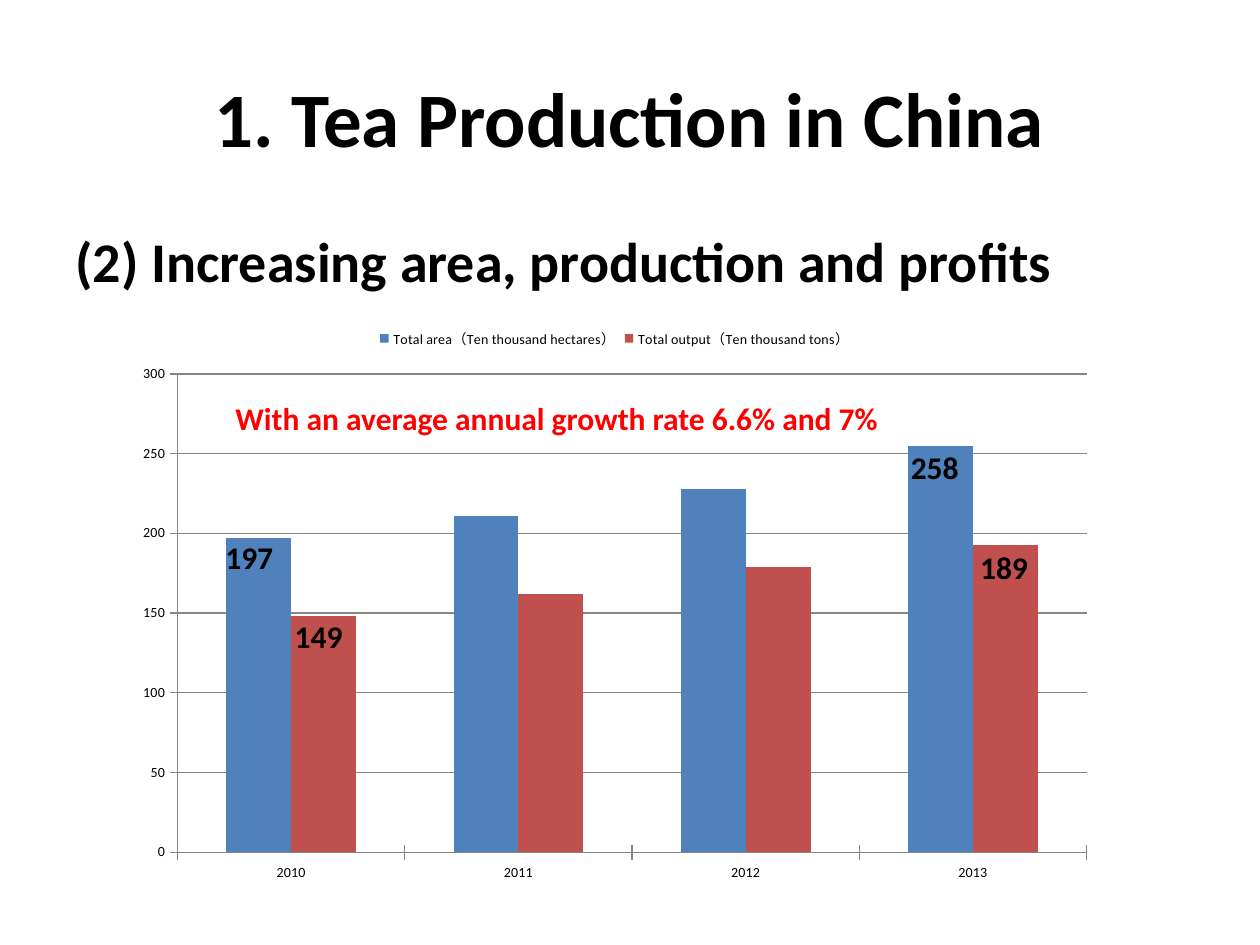
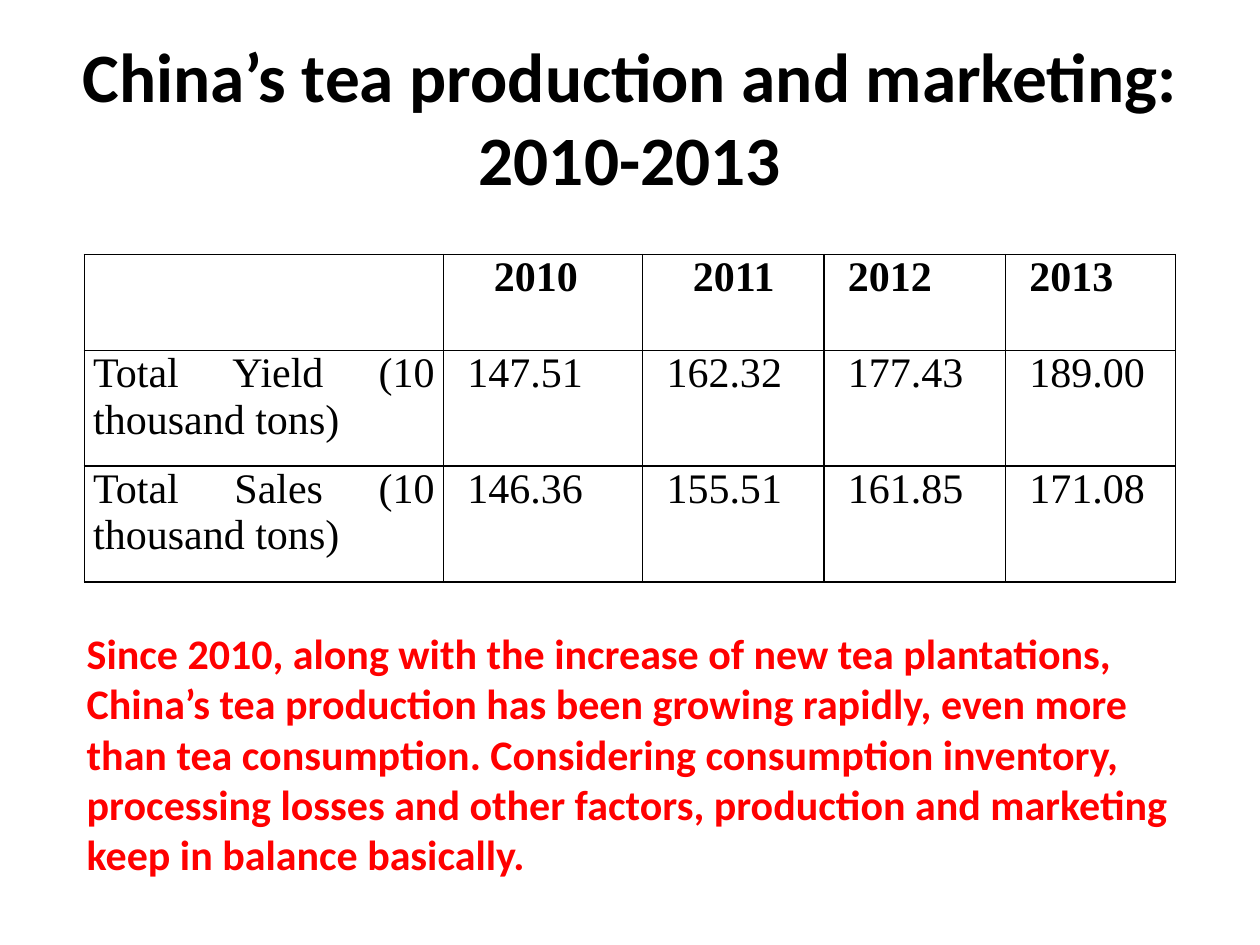
from dataclasses import dataclass

import lxml.etree
import pptx
import pptx.chart.data
import pptx.dml.color
import pptx.enum.chart
import pptx.enum.text
import pptx.oxml.ns
import pptx.util

Inches = pptx.util.Inches
Pt = pptx.util.Pt
Align = pptx.enum.text.PP_ALIGN
Anchor = pptx.enum.text.MSO_ANCHOR

COLORS = {
    "text": "000000",
    "accent": "FF0000",
    "area": "4F81BD",
    "output": "C0504D",
    "grid": "868686",
}
BODY_FONT = "Calibri"
TABLE_FONT = "Times New Roman"


@dataclass
class Label:
    text: str
    left: float
    top: float
    width: float
    height: float
    size: float = 18
    color: str = "text"
    align: Align = Align.LEFT
    anchor: Anchor = Anchor.TOP
    wrap: bool = True


@dataclass
class ChartSeries:
    name: str
    values: tuple[int, ...]
    color: str


YEARS = ("2010", "2011", "2012", "2013")
SERIES = (
    ChartSeries("Total area（Ten thousand hectares）", (197, 211, 228, 255), "area"),
    ChartSeries("Total output（Ten thousand tons）", (148, 162, 179, 193), "output"),
)
BAR_VALUES = (
    ("197", 1.69, 4.22),
    ("149", 2.24, 4.85),
    ("258", 7.13, 3.51),
    ("189", 7.68, 4.3),
)
COLUMN_WIDTHS = (2.85, 1.58, 1.44, 1.44, 1.35)
ROW_HEIGHTS = (0.76, 0.92, 0.92)
HEADER_INDENTS = (0, 0.33, 0.33, 0.12, 0.12)
VALUE_INDENTS = (0, 0.12, 0.12, 0.12, 0.12)
TABLE_ROWS = (
    ("", *YEARS),
    ("Total Yield (10 thousand tons)", "147.51", "162.32", "177.43", "189.00"),
    ("Total Sales (10 thousand tons)", "146.36", "155.51", "161.85", "171.08"),
)
BALANCE_NOTE = (
    "Since 2010, along with the increase of new tea plantations, China’s tea "
    "production has been growing rapidly, even more than tea consumption. "
    "Considering consumption inventory, processing losses and other factors, "
    "production and marketing keep in balance basically."
)


def rgb(name: str) -> pptx.dml.color.RGBColor:
    return pptx.dml.color.RGBColor.from_string(COLORS[name])


def style_font(font, name: str, size: float, color: str, bold: bool) -> None:
    font.name = name
    font.size = Pt(size)
    font.bold = bold
    font.color.rgb = rgb(color)


def add_label(page, label: Label) -> None:
    box = page.shapes.add_textbox(
        Inches(label.left), Inches(label.top), Inches(label.width), Inches(label.height)
    )
    frame = box.text_frame
    frame.word_wrap = label.wrap
    frame.vertical_anchor = label.anchor
    frame.text = label.text
    para = frame.paragraphs[0]
    para.alignment = label.align
    style_font(para.runs[0].font, BODY_FONT, label.size, label.color, True)


def add_title(page, text: str, size: float) -> None:
    add_label(page, Label(text, 0.5, 0.3, 9, 1.25, size,
                          align=Align.CENTER, anchor=Anchor.MIDDLE))


def add_production_chart(page) -> None:
    data = pptx.chart.data.CategoryChartData()
    data.categories = YEARS
    for series in SERIES:
        data.add_series(series.name, series.values)
    chart = page.shapes.add_chart(
        pptx.enum.chart.XL_CHART_TYPE.COLUMN_CLUSTERED,
        Inches(0.98), Inches(2.49), Inches(7.8), Inches(4.6), data,
    ).chart
    style_font(chart.font, BODY_FONT, 8, "text", False)
    chart.has_title = False
    chart.has_legend = True
    chart.legend.position = pptx.enum.chart.XL_LEGEND_POSITION.TOP
    chart.legend.include_in_layout = False

    plot = chart.plots[0]
    plot.gap_width = 150
    plot.overlap = 0
    plot.vary_by_categories = False
    for bars, series in zip(plot.series, SERIES):
        bars.format.fill.solid()
        bars.format.fill.fore_color.rgb = rgb(series.color)

    value_axis = chart.value_axis
    value_axis.minimum_scale = 0
    value_axis.maximum_scale = 300
    value_axis.major_unit = 50
    value_axis.has_major_gridlines = True
    for axis in (chart.category_axis, value_axis):
        axis.major_tick_mark = pptx.enum.chart.XL_TICK_MARK.CROSS
    for part in (chart.category_axis, value_axis, value_axis.major_gridlines):
        part.format.line.color.rgb = rgb("grid")
        part.format.line.width = Pt(0.75)


def add_borders(cell) -> None:
    properties = cell._tc.get_or_add_tcPr()
    qn = pptx.oxml.ns.qn
    for side in ("lnL", "lnR", "lnT", "lnB"):
        line = lxml.etree.SubElement(properties, qn(f"a:{side}"), w=str(Pt(1)))
        fill = lxml.etree.SubElement(line, qn("a:solidFill"))
        lxml.etree.SubElement(fill, qn("a:srgbClr"), val=COLORS["text"])


def fill_cell(cell, text: str, indent: float, bold: bool) -> None:
    add_borders(cell)
    cell.fill.background()
    cell.margin_left = cell.margin_right = Inches(0.07)
    cell.margin_top = cell.margin_bottom = 0
    cell.text_frame.text = text
    para = cell.text_frame.paragraphs[0]
    para.alignment = Align.JUSTIFY
    para._p.get_or_add_pPr().set("indent", str(Inches(indent)))
    for span in para.runs:
        style_font(span.font, TABLE_FONT, 24, "text", bold)


def add_market_table(page) -> None:
    table = page.shapes.add_table(
        len(ROW_HEIGHTS), len(COLUMN_WIDTHS), Inches(0.67), Inches(2.02),
        Inches(sum(COLUMN_WIDTHS)), Inches(sum(ROW_HEIGHTS)),
    ).table
    table.first_row = False
    table.horz_banding = False
    for column, width in zip(table.columns, COLUMN_WIDTHS):
        column.width = Inches(width)
    for row_index, (row, height) in enumerate(zip(table.rows, ROW_HEIGHTS)):
        row.height = Inches(height)
        is_header = row_index == 0
        indents = HEADER_INDENTS if is_header else VALUE_INDENTS
        for cell, text, indent in zip(row.cells, TABLE_ROWS[row_index], indents):
            fill_cell(cell, text, indent, is_header)


def build_production_page(page) -> None:
    add_title(page, "1. Tea Production in China", 44)
    add_label(page, Label("(2) Increasing area, production and profits",
                          0.5, 1.75, 9, 0.7, 32))
    add_production_chart(page)
    add_label(page, Label("With an average annual growth rate 6.6% and 7%",
                          1.77, 3.12, 5.35, 0.4, color="accent", wrap=False))
    for text, left, top in BAR_VALUES:
        add_label(page, Label(text, left, top, 0.59, 0.4, wrap=False))


def build_market_page(page) -> None:
    add_title(page, "China’s tea production and marketing: 2010-2013", 39.6)
    add_market_table(page)
    add_label(page, Label(BALANCE_NOTE, 0.59, 4.93, 9.06, 2.12, 24, "accent"))


def main() -> None:
    deck = pptx.Presentation()
    deck.slide_width = Inches(10)
    deck.slide_height = Inches(7.5)
    for build_page in (build_production_page, build_market_page):
        build_page(deck.slides.add_slide(deck.slide_layouts[6]))
    deck.save("out.pptx")


if __name__ == "__main__":
    main()
